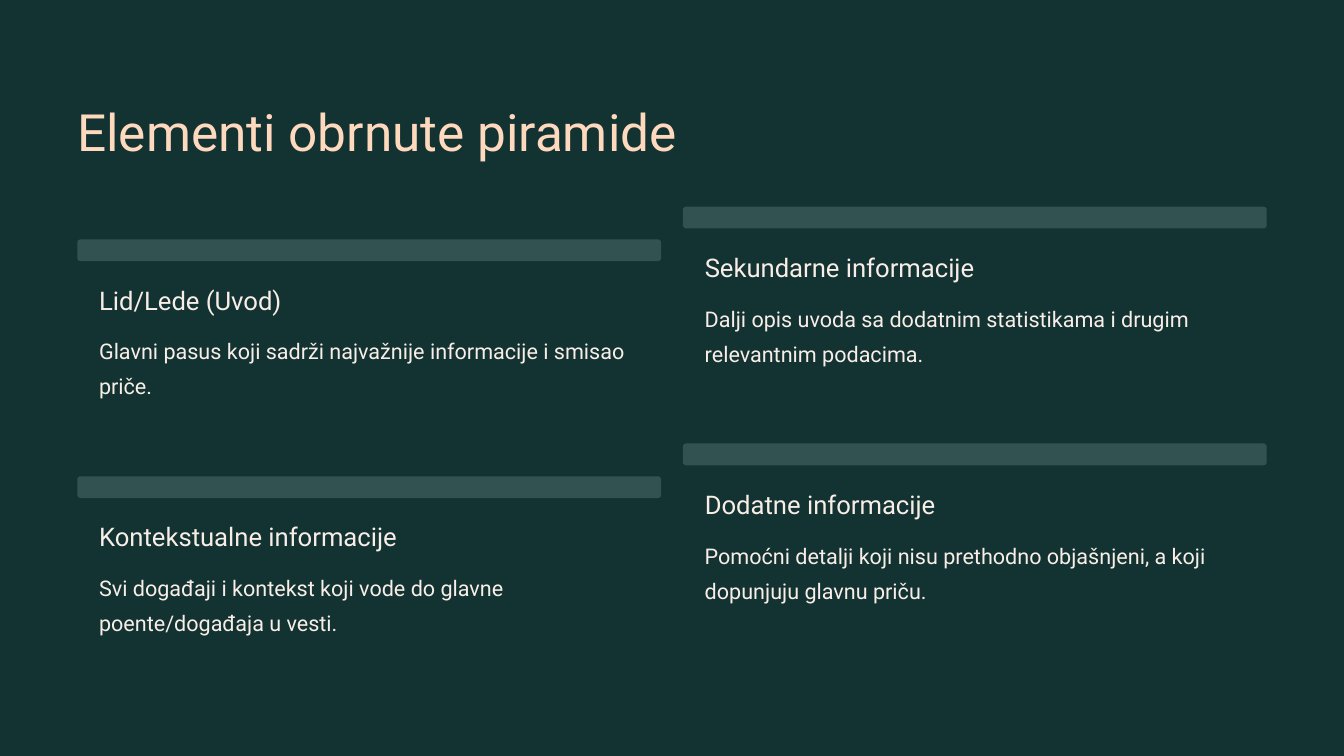
from dataclasses import dataclass

from pptx import Presentation
from pptx import util as u
from pptx.dml.color import RGBColor
from pptx.enum import shapes, text


@dataclass(frozen=True)
class Theme:
    font: str = "Roboto"
    background: str = "123332"
    bar: str = "315251"
    title: str = "FFD9BE"
    body: str = "F9EEE7"
    # Type size and line spacing in points
    title_type: tuple = (44, 55)
    heading_type: tuple = (22, 27.5)
    body_type: tuple = (18.5, 30)


class SlideBuilder:
    def __init__(self, slide, theme):
        self.slide = slide
        self.theme = theme

    def background(self):
        fill = self.slide.background.fill
        fill.solid()
        fill.fore_color.rgb = RGBColor.from_string(self.theme.background)

    def place(self, shape, left, top, width, height):
        shape.left, shape.top = u.Inches(left), u.Inches(top)
        shape.width, shape.height = u.Inches(width), u.Inches(height)

    def set_text(self, shape, words, type_style, color, wrap):
        frame = shape.text_frame
        frame.text = words
        frame.word_wrap = wrap
        frame.auto_size = text.MSO_AUTO_SIZE.NONE
        frame.vertical_anchor = text.MSO_ANCHOR.TOP
        frame.margin_left = frame.margin_right = 0
        frame.margin_top = frame.margin_bottom = 0
        size, spacing = type_style
        paragraph = frame.paragraphs[0]
        paragraph.alignment = text.PP_ALIGN.LEFT
        paragraph.line_spacing = u.Pt(spacing)
        paragraph.font.name = self.theme.font
        paragraph.font.size = u.Pt(size)
        paragraph.font.color.rgb = RGBColor.from_string(color)

    def title(self, words, *box):
        heading = self.slide.shapes.title
        self.place(heading, *box)
        self.set_text(heading, words, self.theme.title_type, self.theme.title, False)

    def label(self, words, type_style, wrap, *box):
        label = self.slide.shapes.add_textbox(*map(u.Inches, box))
        self.set_text(label, words, type_style, self.theme.body, wrap)

    def bar(self, *box):
        bar = self.slide.shapes.add_shape(
            shapes.MSO_SHAPE.ROUNDED_RECTANGLE, *map(u.Inches, box))
        bar.adjustments[0] = 0.15
        bar.shadow.inherit = False
        bar.fill.solid()
        bar.fill.fore_color.rgb = RGBColor.from_string(self.theme.bar)
        bar.line.fill.background()

    def card(self, heading, description, left, top):
        self.bar(left, top, 6.95, 0.26)
        inner = left + 0.26
        self.label(heading, self.theme.heading_type, False,
                   inner, top + 0.52, 3.42, 0.38)
        self.label(description, self.theme.body_type, True,
                   inner, top + 1.07, 6.43, 0.84)


# Columns of cards: left edge, first top, (heading, description) pairs
COLUMNS = [
    (0.92, 2.85, [
        ("Lid/Lede (Uvod)",
         "Glavni pasus koji sadrži najvažnije informacije i smisao priče."),
        ("Kontekstualne informacije",
         "Svi događaji i kontekst koji vode do glavne poente/događaja u vesti."),
    ]),
    (8.13, 2.46, [
        ("Sekundarne informacije",
         "Dalji opis uvoda sa dodatnim statistikama i drugim relevantnim podacima."),
        ("Dodatne informacije",
         "Pomoćni detalji koji nisu prethodno objašnjeni, a koji dopunjuju glavnu priču."),
    ]),
]
ROW_STEP = 2.82


def main():
    deck = Presentation()
    deck.slide_width, deck.slide_height = u.Inches(16), u.Inches(9)
    title_only = deck.slide_layouts[5]
    builder = SlideBuilder(deck.slides.add_slide(title_only), Theme())

    # Background and title
    builder.background()
    builder.title("Elementi obrnute piramide", 0.92, 1.16, 9.3, 0.77)

    # Staggered cards
    for left, first_top, cards in COLUMNS:
        for row, (heading, description) in enumerate(cards):
            builder.card(heading, description, left, first_top + row * ROW_STEP)

    deck.save("out.pptx")


if __name__ == "__main__":
    main()
